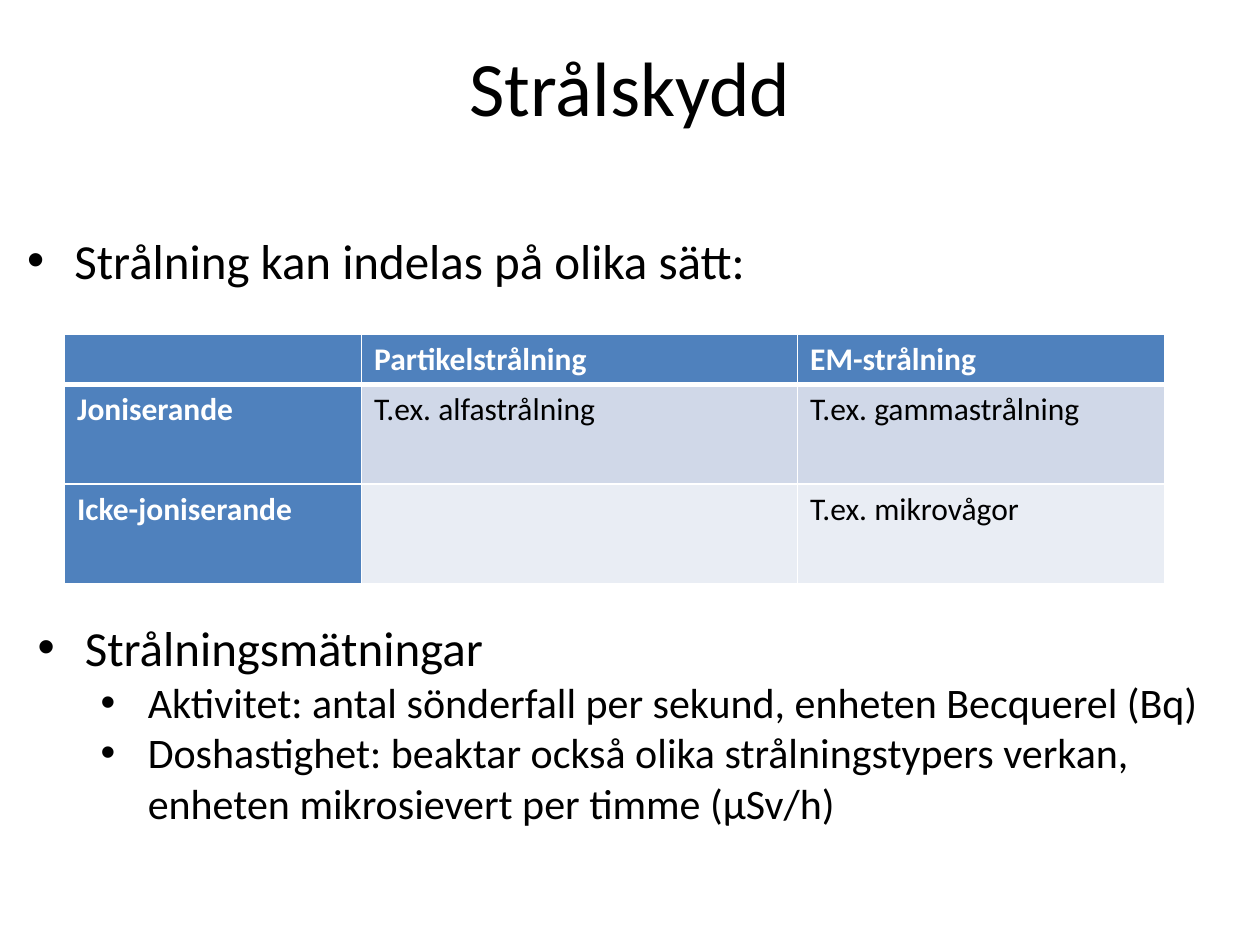
from lxml import etree
from pptx import Presentation
from pptx.dml.color import RGBColor
from pptx.enum.text import MSO_ANCHOR, MSO_AUTO_SIZE, PP_ALIGN
from pptx.oxml.ns import qn
from pptx.util import Cm, Pt

MIDDLE = MSO_ANCHOR.MIDDLE
GROW = MSO_AUTO_SIZE.SHAPE_TO_FIT_TEXT
CENTER = PP_ALIGN.CENTER
BLACK = RGBColor(0x00, 0x00, 0x00)
WHITE = RGBColor(0xFF, 0xFF, 0xFF)
BLUE = RGBColor(0x4F, 0x81, 0xBD)
BANDS = (RGBColor(0xD0, 0xD8, 0xE8), RGBColor(0xE9, 0xED, 0xF4))
FONT = "Calibri"

RADIATION_ROWS = [
    ("", "Partikelstrålning", "EM-strålning"),
    ("Joniserande", "T.ex. alfastrålning", "T.ex. gammastrålning"),
    ("Icke-joniserande", "", "T.ex. mikrovågor"),
]
COLUMN_WIDTHS = (5.99, 8.79, 7.4)
ROW_HEIGHTS = (1.02, 2.01, 2.01)
MEASUREMENTS = [
    ("Strålningsmätningar", 0),
    ("Aktivitet: antal sönderfall per sekund, enheten Becquerel (Bq)", 1),
    ("Doshastighet: beaktar också olika strålningstypers verkan, "
     "enheten mikrosievert per timme (μSv/h)", 1),
]


def style_font(paragraph, size, color=BLACK, bold=False):
    """Set the font shared by all runs of a paragraph."""
    font = paragraph.font
    font.name = FONT
    font.size = Pt(size)
    font.bold = bold
    font.color.rgb = color


def add_bullet(paragraph, level):
    """Give a paragraph a hanging round bullet for its level."""
    paragraph.level = level
    properties = paragraph._p.get_or_add_pPr()
    properties.set("marL", str(Cm(0.95 + 1.27 * level)))
    properties.set("indent", str(-Cm(0.95)))
    etree.SubElement(properties, qn("a:buFont"), typeface="Arial")
    etree.SubElement(properties, qn("a:buChar"), char="•")


def add_title(slide, text, left, top, width, height):
    """Place the centred slide title."""
    frame = slide.shapes.add_textbox(Cm(left), Cm(top), Cm(width), Cm(height)).text_frame
    frame.word_wrap = True
    frame.vertical_anchor = MIDDLE
    paragraph = frame.paragraphs[0]
    paragraph.text = text
    paragraph.alignment = CENTER
    style_font(paragraph, 44)


def add_bullet_list(slide, items, left, top, width, height, margin_top=0.13):
    """Place a list of (text, level) bullets and return its text frame."""
    frame = slide.shapes.add_textbox(Cm(left), Cm(top), Cm(width), Cm(height)).text_frame
    frame.word_wrap = True
    frame.margin_top = Cm(margin_top)
    for index, (text, level) in enumerate(items):
        paragraph = frame.add_paragraph() if index else frame.paragraphs[0]
        paragraph.text = text
        add_bullet(paragraph, level)
        style_font(paragraph, 28 - 4 * level)
    return frame


def add_borders(cell, top, bottom):
    """Draw white cell borders with the given top and bottom widths."""
    properties = cell._tc.get_or_add_tcPr()
    for side, points in (("L", 1), ("R", 1), ("T", top), ("B", bottom)):
        line = etree.SubElement(properties, qn(f"a:ln{side}"), w=str(Pt(points)))
        fill = etree.SubElement(line, qn("a:solidFill"))
        etree.SubElement(fill, qn("a:srgbClr"), val=str(WHITE))


def add_radiation_table(slide, left, top):
    """Place the table of radiation types with header row and column."""
    table = slide.shapes.add_table(
        len(ROW_HEIGHTS), len(COLUMN_WIDTHS), Cm(left), Cm(top),
        Cm(sum(COLUMN_WIDTHS)), Cm(sum(ROW_HEIGHTS))).table
    table.first_col = True
    for column, width in zip(table.columns, COLUMN_WIDTHS):
        column.width = Cm(width)
    for row_index, (row, height) in enumerate(zip(table.rows, ROW_HEIGHTS)):
        row.height = Cm(height)
        for column_index, cell in enumerate(row.cells):
            is_header = row_index == 0 or column_index == 0
            add_borders(cell, 3 if row_index == 1 else 1, 3 if row_index == 0 else 1)
            cell.fill.solid()
            cell.fill.fore_color.rgb = BLUE if is_header else BANDS[row_index - 1]
            paragraph = cell.text_frame.paragraphs[0]
            paragraph.text = RADIATION_ROWS[row_index][column_index]
            style_font(paragraph, 18, WHITE if is_header else BLACK, is_header)


def main():
    """Build and save the radiation protection slide."""
    presentation = Presentation()
    presentation.slide_width = Cm(25.4)
    presentation.slide_height = Cm(19.05)
    slide = presentation.slides.add_slide(presentation.slide_layouts[6])
    add_title(slide, "Strålskydd", 1.9, 0.33, 21.59, 2.79)
    add_bullet_list(slide, [("Strålning kan indelas på olika sätt:", 0)],
                    0.3, 3.12, 24.21, 14.4, margin_top=1.53)
    add_radiation_table(slide, 1.3, 6.73)
    measurements = add_bullet_list(slide, MEASUREMENTS, 0.51, 12.32, 24, 4.52)
    measurements.auto_size = GROW
    presentation.save("out.pptx")


if __name__ == "__main__":
    main()
